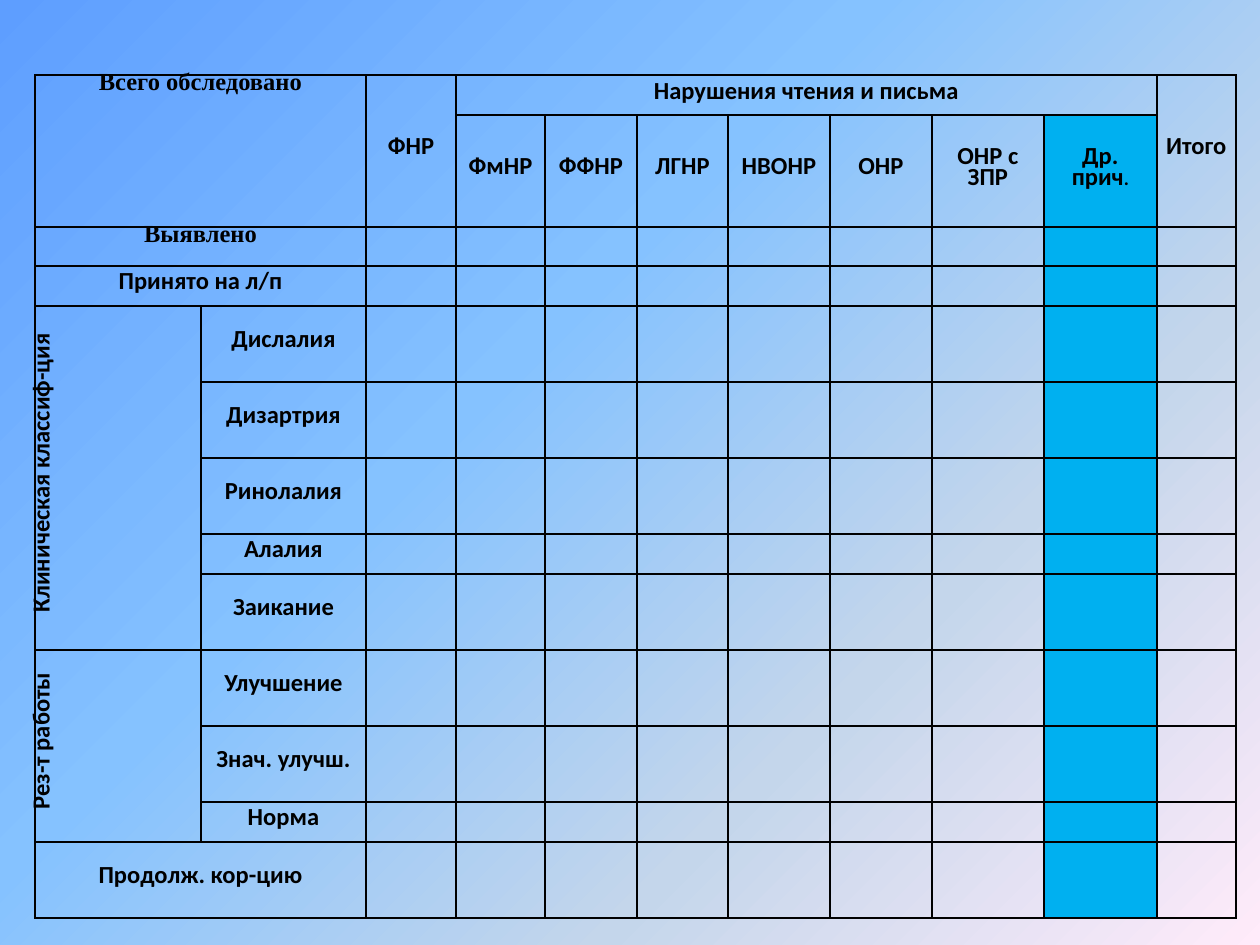
from pptx import Presentation
from pptx import util as u
from pptx.dml.color import RGBColor
from pptx.enum import text
from pptx.oxml import parse_xml
from pptx.oxml.ns import nsdecls

PX = u.Inches(1) // 126
NO_STYLE = "{2D5ABB26-0587-4C30-8999-92F81FD0307C}"

COLUMNS = [166, 165, 90, 89, 92, 91, 102, 102, 112, 113, 79]
HEADER_ROWS = [40, 112, 39, 40]
TALL, LOW = 76, 40
ROWS = HEADER_ROWS + [TALL] * 3 + [LOW] + [TALL] * 3 + [LOW, TALL]
OTHER_CAUSES = 9  # column with the highlighted fill

# (first row, first column, last row, last column)
MERGES = [(0, 0, 1, 1), (0, 2, 1, 2), (0, 3, 0, 9), (0, 10, 1, 10),
          (2, 0, 2, 1), (3, 0, 3, 1), (4, 0, 8, 0), (9, 0, 11, 0),
          (12, 0, 12, 1)]

DISORDERS = ["ФмНР", "ФФНР", "ЛГНР", "НВОНР", "ОНР", "ОНР с ЗПР"]
OUTCOMES = ["Дислалия", "Дизартрия", "Ринолалия", "Алалия", "Заикание",
            "Улучшение", "Знач. улучш.", "Норма"]


def color(value):
    return RGBColor.from_string(value)


class Sheet:
    """Holds the style and the slide being filled."""
    ink = "000000"
    accent = "00B0F0"
    font = "Calibri"
    serif = "Times New Roman"
    size = 14

    def __init__(self, slide):
        self.slide = slide

    def background(self, stops, angle):
        stop_xml = "".join(
            f'<a:gs pos="{pos * 1000}"><a:srgbClr val="{value}"/></a:gs>'
            for pos, value in stops)
        self.slide.element.cSld.insert(0, parse_xml(
            f'<p:bg {nsdecls("p", "a")}><p:bgPr><a:gradFill rotWithShape="1">'
            f'<a:gsLst>{stop_xml}</a:gsLst>'
            f'<a:lin ang="{angle * 60000}" scaled="0"/></a:gradFill>'
            '<a:effectLst/></p:bgPr></p:bg>'))

    def table(self, left, top, columns, rows):
        frame = self.slide.shapes.add_table(
            len(rows), len(columns), left * PX, top * PX,
            sum(columns) * PX, sum(rows) * PX)
        grid = frame.table
        grid.first_row = grid.horz_banding = False
        grid._tbl.tblPr.find("{*}tableStyleId").text = NO_STYLE
        for column, width in zip(grid.columns, columns):
            column.width = width * PX
        for row, height in zip(grid.rows, rows):
            row.height = height * PX
        return grid

    def blank(self, cell, fill=None):
        """Give a cell its borders, margins and fill."""
        cell.margin_left = cell.margin_right = 8 * PX
        cell.margin_top = cell.margin_bottom = 0
        if fill:
            cell.fill.solid()
            cell.fill.fore_color.rgb = color(fill)
        else:
            cell.fill.background()
        properties = cell._tc.get_or_add_tcPr()
        for index, side in enumerate("LRTB"):
            properties.insert(index, parse_xml(
                f'<a:ln{side} {nsdecls("a")} w="{u.Pt(1)}"><a:solidFill>'
                f'<a:srgbClr val="{self.ink}"/></a:solidFill></a:ln{side}>'))
        paragraph = cell.text_frame.paragraphs[0]
        paragraph.line_spacing = u.Pt(12)
        paragraph.font.size = u.Pt(self.size)

    def label(self, cell, words, after=10, serif=False):
        if not serif:
            cell.vertical_anchor = text.MSO_ANCHOR.MIDDLE
        paragraph = cell.text_frame.paragraphs[0]
        paragraph.add_run().text = words
        paragraph.alignment = text.PP_ALIGN.CENTER
        paragraph.space_after = u.Pt(after)
        font = paragraph.font
        font.name = self.serif if serif else self.font
        font.bold = True
        font.color.rgb = color(self.ink)
        return paragraph

    def upright(self, cell, words):
        """Label that reads from bottom to top."""
        paragraph = self.label(cell, words)
        paragraph._p.get_or_add_pPr().set("marL", str(10 * PX))
        cell._tc.get_or_add_tcPr().set("vert", "vert270")


def main():
    deck = Presentation()
    deck.slide_width, deck.slide_height = u.Inches(10), u.Inches(7.5)
    sheet = Sheet(deck.slides.add_slide(deck.slide_layouts[6]))
    sheet.background([(0, "5E9EFF"), (40, "85C2FF"),
                      (70, "C4D6EB"), (100, "FFEBFA")], 45)

    report = sheet.table(35, 75, COLUMNS, ROWS)
    for row in range(len(ROWS)):
        for column in range(len(COLUMNS)):
            marked = column == OTHER_CAUSES and row > 0
            sheet.blank(report.cell(row, column),
                        sheet.accent if marked else None)
    for top, left, bottom, right in MERGES:
        report.cell(top, left).merge(report.cell(bottom, right))

    sheet.label(report.cell(0, 0), "Всего обследовано", 0, serif=True)
    sheet.label(report.cell(0, 2), "ФНР", 0)
    sheet.label(report.cell(0, 3), "Нарушения чтения и письма")
    sheet.label(report.cell(0, 10), "Итого")
    for column, disorder in enumerate(DISORDERS, 3):
        sheet.label(report.cell(1, column), disorder)
    other = sheet.label(report.cell(1, OTHER_CAUSES), "Др. прич")
    period = other.add_run()
    period.text = "."
    period.font.size = u.Pt(11)

    sheet.label(report.cell(2, 0), "Выявлено", 0, serif=True)
    sheet.label(report.cell(3, 0), "Принято на л/п")
    sheet.upright(report.cell(4, 0), "Клиническая классиф-ция")
    sheet.upright(report.cell(9, 0), "Рез-т работы")
    for row, outcome in enumerate(OUTCOMES, 4):
        sheet.label(report.cell(row, 1), outcome, 0 if row == 4 else 10)
    sheet.label(report.cell(12, 0), "Продолж. кор-цию")

    deck.save("out.pptx")


if __name__ == "__main__":
    main()
